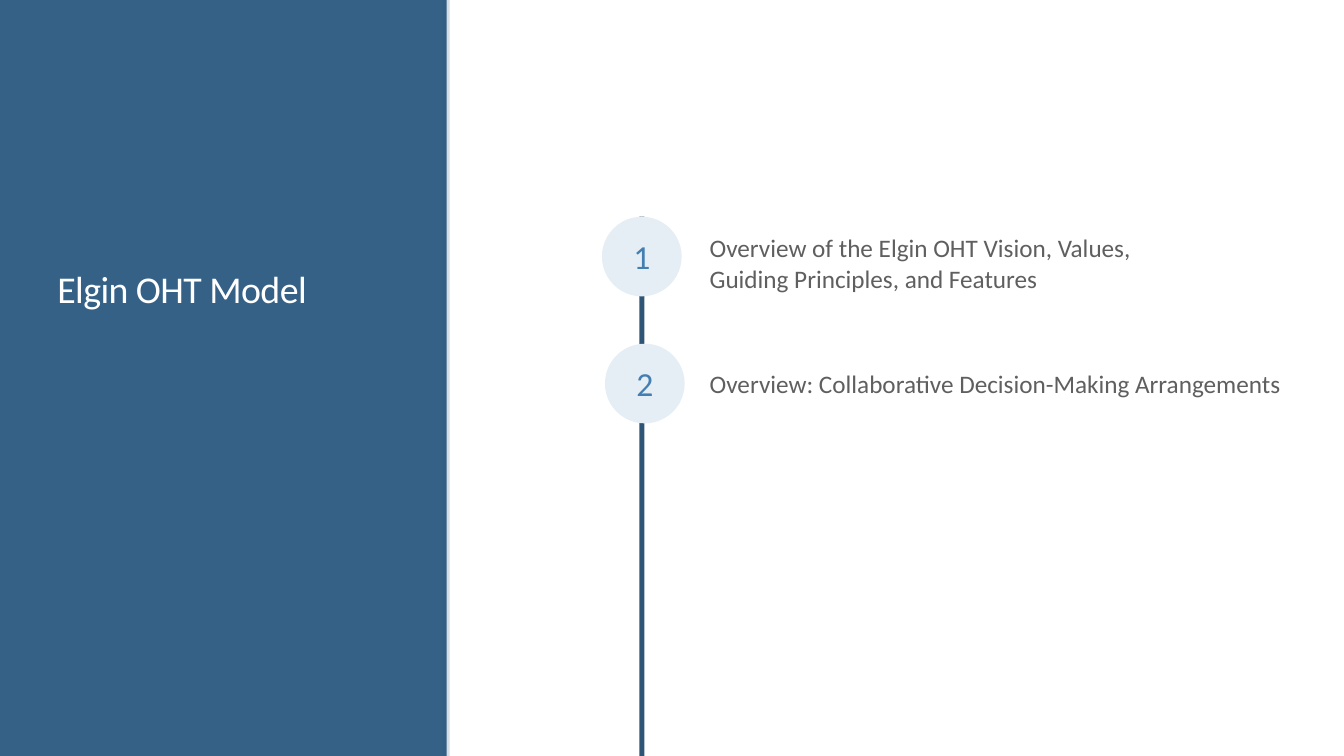
from lxml import etree
from pptx import Presentation
from pptx import util as u
from pptx.dml.color import RGBColor
from pptx.enum import shapes, text
from pptx.oxml import ns

PANEL = RGBColor(0x35, 0x61, 0x87)
EDGE = RGBColor(0x31, 0x5A, 0x7D)
TIMELINE = RGBColor(0x2E, 0x55, 0x76)
BADGE = RGBColor(0xE5, 0xED, 0xF5)
NUMBER = RGBColor(0x44, 0x7F, 0xB1)
BODY = RGBColor(0x5F, 0x5F, 0x5F)
WHITE = RGBColor(0xFF, 0xFF, 0xFF)


def write(frame, content, size, color, align=text.PP_ALIGN.LEFT,
          anchor=text.MSO_ANCHOR.TOP, line_spacing=None, tracking=None):
    frame.word_wrap = True
    frame.vertical_anchor = anchor
    paragraph = frame.paragraphs[0]
    paragraph.alignment = align
    if line_spacing:
        paragraph.line_spacing = line_spacing
    run = paragraph.add_run()
    run.text = content
    run.font.name = "Calibri"
    run.font.size = u.Pt(size)
    run.font.color.rgb = color
    if tracking:
        run._r.get_or_add_rPr().set("spc", str(round(tracking * 100)))


class AgendaSlide:
    def __init__(self, slide):
        self.slide = slide

    def block(self, box, color, kind=shapes.MSO_SHAPE.RECTANGLE, opacity=None):
        shape = self.slide.shapes.add_shape(kind, *map(u.Inches, box))
        shape.shadow.inherit = False
        shape.fill.solid()
        shape.fill.fore_color.rgb = color
        shape.line.fill.background()
        if opacity:
            tint = shape._element.spPr.find(".//" + ns.qn("a:srgbClr"))
            etree.SubElement(tint, ns.qn("a:alpha")).set("val", str(opacity * 1000))
        return shape

    def label(self, box, content, size, color, **style):
        frame = self.slide.shapes.add_textbox(*map(u.Inches, box)).text_frame
        write(frame, content, size, color, **style)

    def badge(self, left, top, number):
        circle = self.block((left, top, 0.79, 0.79), BADGE, shapes.MSO_SHAPE.OVAL)
        write(circle.text_frame, number, 24, NUMBER,
              align=text.PP_ALIGN.CENTER, anchor=text.MSO_ANCHOR.MIDDLE)


def main():
    deck = Presentation()
    deck.slide_width, deck.slide_height = u.Inches(13.33), u.Inches(7.5)
    agenda = AgendaSlide(deck.slides.add_slide(deck.slide_layouts[6]))

    agenda.block((0, 0, 4.43, 7.5), PANEL)
    agenda.block((4.39, 0, 0.07, 7.5), EDGE, opacity=20)
    agenda.label((0.47, 0.64, 3.5, 2.5), "Elgin OHT Model", 27, WHITE,
                 anchor=text.MSO_ANCHOR.BOTTOM, line_spacing=0.85, tracking=-0.4)
    agenda.block((6.34, 2.15, 0.05, 5.35), TIMELINE)

    topics = [
        ((5.97, 2.15), (6.94, 2.26, 4.94, 0.71),
         "Overview of the Elgin OHT Vision, Values, Guiding Principles, and Features"),
        ((6, 3.41), (6.94, 3.6, 5.92, 0.4),
         "Overview: Collaborative Decision-Making Arrangements"),
    ]
    for number, (badge_at, topic_box, topic) in enumerate(topics, 1):
        agenda.badge(*badge_at, str(number))
        agenda.label(topic_box, topic, 18, BODY)

    deck.save("out.pptx")


if __name__ == "__main__":
    main()
